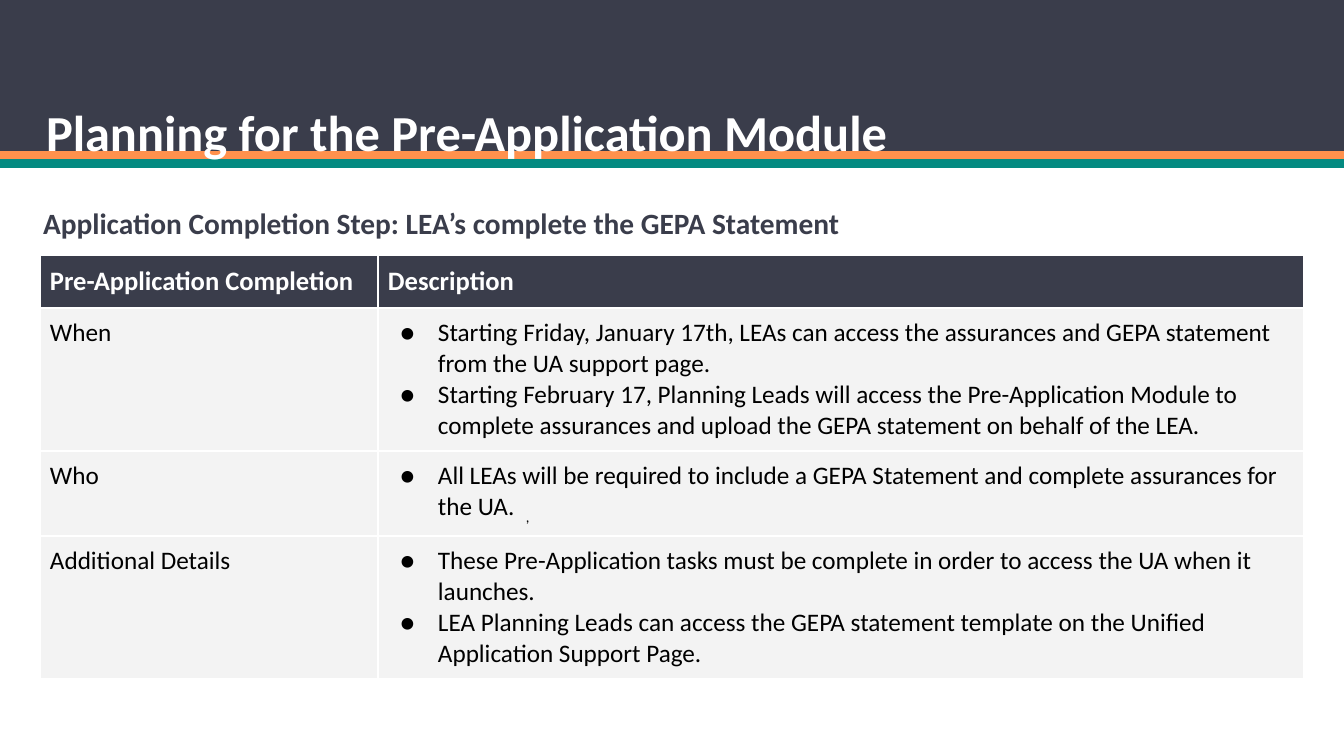
import pptx
import pptx.dml.color
import pptx.enum.shapes
import pptx.enum.text
import pptx.oxml
import pptx.oxml.ns
import pptx.util

TITLE = "Planning for the Pre-Application Module"
SUBTITLE = "Application Completion Step: LEA’s complete the GEPA Statement"
HEADERS = ["Pre-Application Completion", "Description"]
ROWS = [
    ("When", [
        "Starting Friday, January 17th, LEAs can access the assurances and GEPA statement "
        "from the UA support page.",
        "Starting February 17, Planning Leads will access the Pre-Application Module to "
        "complete assurances and upload the GEPA statement on behalf of the LEA.",
    ]),
    ("Who", [
        "All LEAs will be required to include a GEPA Statement and complete assurances "
        "for the UA.  ",
    ]),
    ("Additional Details", [
        "These Pre-Application tasks must be complete in order to access the UA when it launches.",
        "LEA Planning Leads can access the GEPA statement template on the Unified "
        "Application Support Page.",
    ]),
]
SUBSCRIPTS = {"Who": ","}  # small mark after the last bullet of a row

NAVY, ORANGE, TEAL = "3A3D4B", "FF914D", "048A81"
WHITE, BLACK, GREY = "FFFFFF", "000000", "F3F3F3"
FONT = "Calibri"

SLIDE_W, SLIDE_H = 1344, 756
BANDS = [(0, 151, NAVY), (151, 9, ORANGE), (159, 9, TEAL)]  # top, height, colour
TITLE_BOX = (33, 64, 1252, 83)
SUBTITLE_BOX = (33, 195, 1239, 295)
TABLE_LEFT, TABLE_TOP = 40, 255
COL_WIDTHS = [338, 926]
ROW_HEIGHTS = [53, 143, 85, 142]
TITLE_INSET, INSET = 13, 10
BULLET_INDENT, BULLET_HANG = 50, 38


def px(n):
    return pptx.util.Emu(round(n * 914400 / 100.8))


def rgb(hex_colour):
    return pptx.dml.color.RGBColor.from_string(hex_colour)


def add_xml(parent, xml):
    ns = pptx.oxml.ns.nsdecls("a")
    parent.append(pptx.oxml.parse_xml(xml.replace(">", f" {ns}>", 1)))


def write(p, text, size=18, colour=BLACK, bold=False, before=None, after=None,
          spacing=None, bullet=False, subscript=""):
    """Fill a paragraph with formatted text and an optional subscript ending."""
    if spacing:
        p.line_spacing = spacing
    if before is not None:
        p.space_before = pptx.util.Pt(before)
    if after is not None:
        p.space_after = pptx.util.Pt(after)
    for part in filter(None, (text, subscript)):
        r = p.add_run()
        r.text = part
        r.font.name, r.font.size, r.font.bold = FONT, pptx.util.Pt(size), bold
        r.font.color.rgb = rgb(colour)
    if subscript:
        r.font._element.set("baseline", "-25000")
    if bullet:
        pPr = p._p.get_or_add_pPr()
        pPr.set("marL", str(px(BULLET_INDENT)))
        pPr.set("indent", str(-px(BULLET_HANG)))
        add_xml(pPr, f'<a:buClr><a:srgbClr val="{BLACK}"/></a:buClr>')
        add_xml(pPr, f'<a:buFont typeface="{FONT}"></a:buFont>')
        add_xml(pPr, '<a:buChar char="●"></a:buChar>')


def set_margins(obj, inset):
    obj.margin_left = obj.margin_right = obj.margin_top = obj.margin_bottom = px(inset)


def prepare_frame(tf, inset):
    tf.word_wrap = True
    tf.auto_size = pptx.enum.text.MSO_AUTO_SIZE.NONE
    tf.vertical_anchor = pptx.enum.text.MSO_ANCHOR.TOP
    set_margins(tf, inset)


def add_bands(slide):
    for top, height, colour in BANDS:
        sp = slide.shapes.add_shape(pptx.enum.shapes.MSO_SHAPE.RECTANGLE,
                                    0, px(top), px(SLIDE_W), px(height))
        sp.shadow.inherit = False
        sp.fill.solid()
        sp.fill.fore_color.rgb = rgb(colour)
        sp.line.fill.background()


def add_title(slide):
    title = slide.shapes.title
    title.left, title.top, title.width, title.height = map(px, TITLE_BOX)
    slide.shapes._spTree.append(title._element)  # in front of the bands
    prepare_frame(title.text_frame, TITLE_INSET)
    p = title.text_frame.paragraphs[0]
    p.alignment = pptx.enum.text.PP_ALIGN.LEFT
    write(p, TITLE, size=36, colour=WHITE, bold=True, before=0, spacing=1.4)


def add_subtitle(slide):
    tf = slide.shapes.add_textbox(*map(px, SUBTITLE_BOX)).text_frame
    prepare_frame(tf, INSET)
    write(tf.paragraphs[0], SUBTITLE, size=21, colour=NAVY, bold=True, before=10)


def style_cell(cell, fill):
    set_margins(cell, INSET)
    tcPr = cell._tc.get_or_add_tcPr()
    for side in "LRTB":
        add_xml(tcPr, f'<a:ln{side} w="{pptx.util.Pt(2.25)}"><a:solidFill>'
                      f'<a:srgbClr val="{WHITE}"/></a:solidFill></a:ln{side}>')
    cell.fill.solid()
    cell.fill.fore_color.rgb = rgb(fill)


def add_steps_table(slide):
    table = slide.shapes.add_table(
        len(ROW_HEIGHTS), len(COL_WIDTHS), px(TABLE_LEFT), px(TABLE_TOP),
        px(sum(COL_WIDTHS)), px(sum(ROW_HEIGHTS))).table
    table.horz_banding = False
    for col, width in zip(table.columns, COL_WIDTHS):
        col.width = px(width)
    for i, (row, height) in enumerate(zip(table.rows, ROW_HEIGHTS)):
        row.height = px(height)
        for cell in row.cells:
            style_cell(cell, GREY if i else NAVY)
    for c, header in enumerate(HEADERS):
        write(table.cell(0, c).text_frame.paragraphs[0], header,
              size=19, colour=WHITE, bold=True)
    for i, (label, bullets) in enumerate(ROWS, 1):
        write(table.cell(i, 0).text_frame.paragraphs[0], label, after=10)
        tf = table.cell(i, 1).text_frame
        for n, text in enumerate(bullets, 1):
            p = tf.paragraphs[0] if n == 1 else tf.add_paragraph()
            mark = SUBSCRIPTS.get(label, "") if n == len(bullets) else ""
            write(p, text, bullet=True, subscript=mark)


def main():
    prs = pptx.Presentation()
    prs.slide_width, prs.slide_height = px(SLIDE_W), px(SLIDE_H)
    slide = prs.slides.add_slide(prs.slide_layouts[5])
    add_bands(slide)
    add_title(slide)
    add_subtitle(slide)
    add_steps_table(slide)
    prs.save("out.pptx")


if __name__ == "__main__":
    main()
